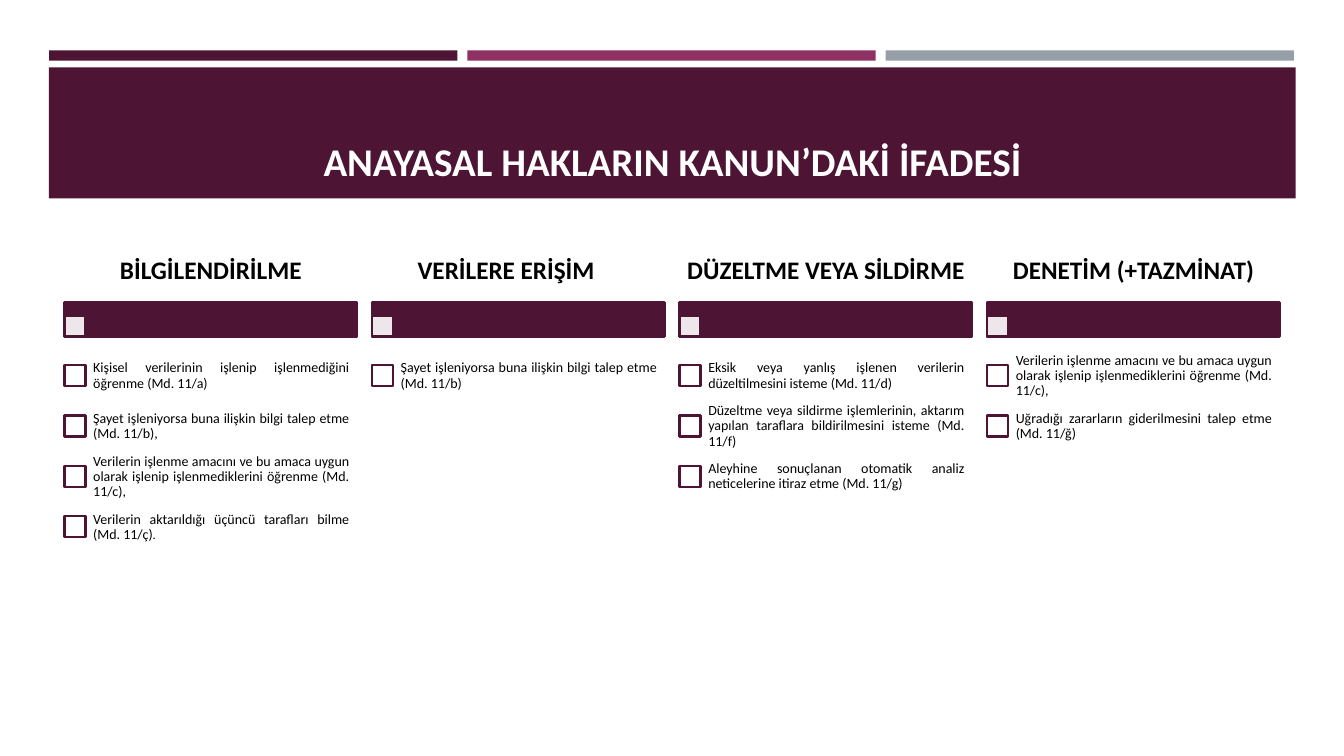
import pptx
import pptx.dml.color
import pptx.enum.shapes
import pptx.enum.text
import pptx.oxml.ns
import pptx.util
import lxml.etree

Cm = pptx.util.Cm
Align = pptx.enum.text.PP_ALIGN
Anchor = pptx.enum.text.MSO_ANCHOR

COLORS = {
    "plum": "4D1434",
    "magenta": "903163",
    "gray": "969FA7",
    "white": "FFFFFF",
    "black": "000000",
}

COLUMNS = [
    ("BİLGİLENDİRİLME", [
        [("Kişisel verilerinin işlenip işlenmediğini öğrenme (Md. 11/a)", 10)],
        [("Şayet işleniyorsa buna ilişkin bilgi talep etme (Md. 11/b),", 10)],
        [("Verilerin işlenme amacını ve bu amaca uygun olarak işlenip "
          "işlenmediklerini öğrenme (Md. 11/c),", 10)],
        [("Verilerin aktarıldığı üçüncü tarafları bilme (Md. 11/ç)", 10), (".", 9)],
    ]),
    ("VERİLERE ERİŞİM\t", [
        [("Şayet işleniyorsa buna ilişkin bilgi talep etme (Md. 11/b)", 10)],
    ]),
    ("DÜZELTME VEYA SİLDİRME", [
        [("Eksik veya yanlış işlenen verilerin düzeltilmesini isteme (Md. 11/d)", 10)],
        [("Düzeltme veya sildirme işlemlerinin, aktarım yapılan taraflara "
          "bildirilmesini isteme (Md. 11/f)", 10)],
        [("Aleyhine sonuçlanan otomatik analiz neticelerine itiraz etme (Md. 11/g)", 10)],
    ]),
    ("DENETİM (+TAZMİNAT)", [
        [("Verilerin işlenme amacını ve bu amaca uygun olarak işlenip "
          "işlenmediklerini öğrenme (Md. 11/c),", 10)],
        [("Uğradığı zararların giderilmesini talep etme (Md. 11/ğ)", 10)],
    ]),
]

COLUMN_LEFT, COLUMN_PITCH, COLUMN_WIDTH = 1.63, 7.75, 7.37
BAR_TOP, BAR_HEIGHT = 7.62, 0.86
BOX_SIZE, BOX_INSET = 0.53, 0.36
ROW_TOP, ROW_HEIGHT = 8.84, 1.27


class SlideBuilder:
    """Draws styled elements on one slide."""

    font = "Calibri"

    def __init__(self, slide):
        self.slide = slide

    def color(self, name):
        return pptx.dml.color.RGBColor.from_string(COLORS[name])

    def rectangle(self, left, top, width, height, fill, line=None, opacity=None):
        shape = self.slide.shapes.add_shape(
            pptx.enum.shapes.MSO_SHAPE.RECTANGLE,
            Cm(left), Cm(top), Cm(width), Cm(height))
        shape.shadow.inherit = False
        shape.fill.solid()
        shape.fill.fore_color.rgb = self.color(fill)
        if line:
            shape.line.color.rgb = self.color(line)
            shape.line.width = pptx.util.Pt(1.75)
        else:
            shape.line.fill.background()
        if opacity:
            color = shape.element.xpath("./p:spPr/a:solidFill/a:srgbClr")[0]
            alpha = lxml.etree.SubElement(color, pptx.oxml.ns.qn("a:alpha"))
            alpha.set("val", str(opacity * 1000))
        return shape

    def add_runs(self, frame, runs, align, anchor, color="black", bold=False, spacing=0.9):
        frame.word_wrap = True
        frame.auto_size = pptx.enum.text.MSO_AUTO_SIZE.NONE
        frame.vertical_anchor = anchor
        paragraph = frame.paragraphs[0]
        paragraph.alignment = align
        paragraph.line_spacing = spacing
        for text, size in runs:
            run = paragraph.add_run()
            run.text = text
            run.font.name = self.font
            run.font.size = pptx.util.Pt(size)
            run.font.bold = bold
            run.font.color.rgb = self.color(color)

    def text(self, left, top, width, height, runs, align, margins, bold=False):
        shape = self.slide.shapes.add_textbox(Cm(left), Cm(top), Cm(width), Cm(height))
        frame = shape.text_frame
        frame.margin_left = frame.margin_right = Cm(margins[0])
        frame.margin_top = frame.margin_bottom = Cm(margins[1])
        self.add_runs(frame, runs, align, Anchor.MIDDLE, bold=bold)

    def title(self, text, banner):
        title = self.slide.shapes.title
        title.left, title.top = Cm(1.63), Cm(1.96)
        title.width, title.height = Cm(30.63), Cm(2.82)
        self.add_runs(title.text_frame, [(text, 28)], Align.CENTER, Anchor.BOTTOM,
                      color="white", bold=True, spacing=1.0)
        banner.element.addnext(title.element)

    def column(self, left, heading, items):
        self.rectangle(left, BAR_TOP, COLUMN_WIDTH, BAR_HEIGHT, "plum", "plum")
        self.rectangle(left, BAR_TOP + BAR_HEIGHT - BOX_SIZE, BOX_SIZE, BOX_SIZE,
                       "white", "plum", opacity=90)
        self.text(left, 6.07, COLUMN_WIDTH, 1.55, [(heading, 18)],
                  Align.CENTER, (0.1, 0.07), bold=True)
        for row, runs in enumerate(items):
            top = ROW_TOP + row * ROW_HEIGHT
            self.rectangle(left, top + BOX_INSET, BOX_SIZE, BOX_SIZE, "white", "plum")
            self.text(left + 0.52, top, COLUMN_WIDTH - 0.52, ROW_HEIGHT, runs,
                      Align.JUSTIFY, (0.2, 0.2))


def main():
    presentation = pptx.Presentation()
    presentation.slide_width = Cm(33.87)
    presentation.slide_height = Cm(19.05)
    builder = SlideBuilder(presentation.slides.add_slide(presentation.slide_layouts[5]))

    for index, fill in enumerate(("plum", "magenta", "gray")):
        builder.rectangle(1.24 + index * 10.54, 1.27, 10.29, 0.26, fill)
    banner = builder.rectangle(1.23, 1.7, 31.42, 3.3, "plum")
    builder.title("ANAYASAL HAKLARIN KANUN’DAKİ İFADESİ", banner)

    for index, (heading, items) in enumerate(COLUMNS):
        builder.column(COLUMN_LEFT + index * COLUMN_PITCH, heading, items)

    presentation.save("out.pptx")


if __name__ == "__main__":
    main()
